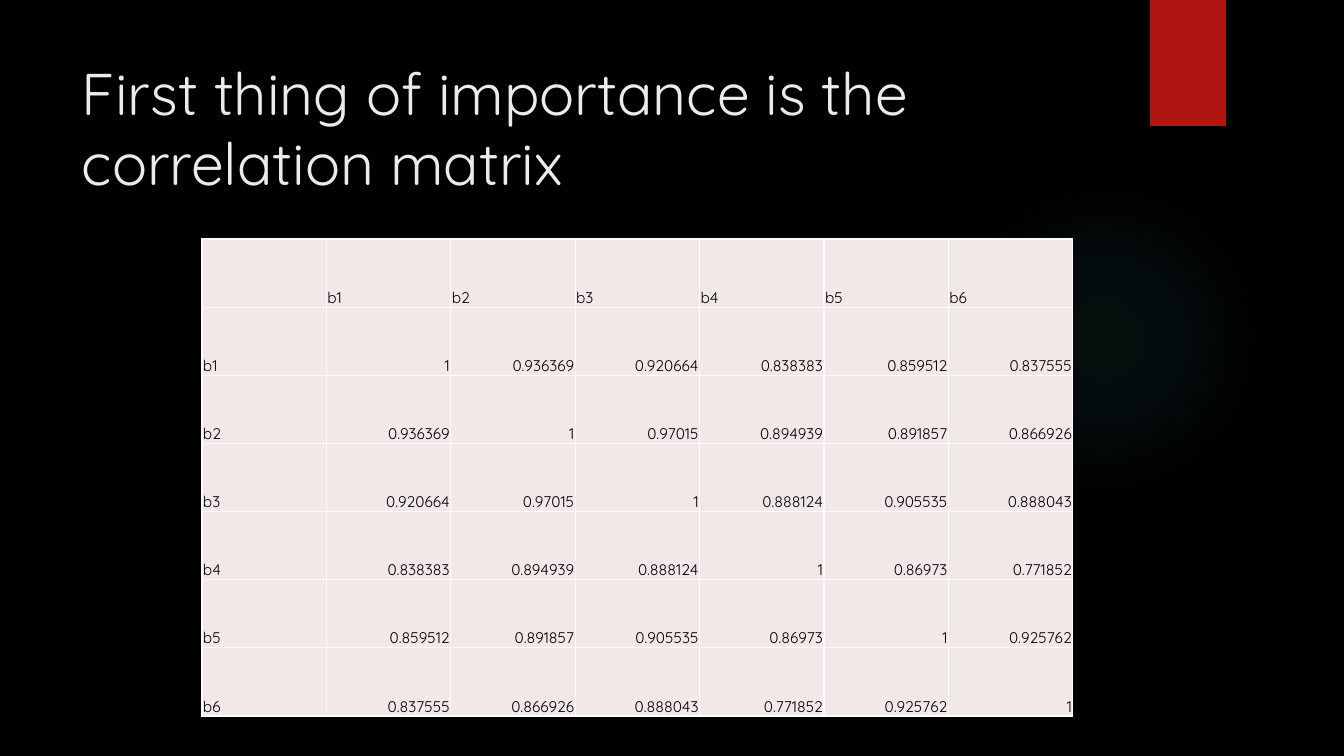
import pptx
import pptx.dml.color
import pptx.enum.shapes
import pptx.enum.text
import pptx.oxml
import pptx.oxml.ns
import pptx.util

SCALE = 12192000 / 1344  # EMU in one px
FONT = "Quicksand"
COLORS = {
    "back": "000000",
    "glow": "50B9C1",
    "tab": "B01513",
    "title": "EBEBEB",
    "cell": "F2E8E7",
    "text": "000000",
    "rule": "FFFFFF",
}
NAMES = ["b1", "b2", "b3", "b4", "b5", "b6"]
# Upper half of the symmetric matrix, from the diagonal rightward
UPPER = [
    ["1", "0.936369", "0.920664", "0.838383", "0.859512", "0.837555"],
    ["1", "0.97015", "0.894939", "0.891857", "0.866926"],
    ["1", "0.888124", "0.905535", "0.888043"],
    ["1", "0.86973", "0.771852"],
    ["1", "0.925762"],
    ["1"],
]
ALIGN = pptx.enum.text.PP_ALIGN
ANCHOR = pptx.enum.text.MSO_ANCHOR
SHAPE = pptx.enum.shapes.MSO_SHAPE


def px(count):
    return pptx.util.Emu(round(count * SCALE))


def color(name):
    return pptx.dml.color.RGBColor.from_string(COLORS[name])


def paint(fill, name):
    fill.solid()
    fill.fore_color.rgb = color(name)


def write(frame, text, size, tint, align=ALIGN.LEFT):
    para = frame.paragraphs[0]
    para.alignment = align
    run = para.add_run()
    run.text = text
    run.font.name = FONT
    run.font.size = pptx.util.Pt(size)
    run.font.color.rgb = color(tint)


def add_shape(slide, kind, box, tint):
    shape = slide.shapes.add_shape(kind, *map(px, box))
    shape.shadow.inherit = False
    shape.line.fill.background()
    paint(shape.fill, tint)
    return shape


def add_glow(slide, box):
    shape = add_shape(slide, SHAPE.OVAL, box, "glow")
    stops = "".join(
        f'<a:gs pos="{pos}000"><a:srgbClr val="{COLORS["glow"]}">'
        f'<a:alpha val="{alpha}000"/></a:srgbClr></a:gs>'
        for pos, alpha in [(0, 7), (36, 6), (69, 0)]
    )
    grad = pptx.oxml.parse_xml(
        f'<a:gradFill {pptx.oxml.ns.nsdecls("a")}><a:gsLst>{stops}</a:gsLst>'
        '<a:path path="circle"><a:fillToRect l="50000" t="50000" '
        'r="50000" b="50000"/></a:path></a:gradFill>'
    )
    props = shape.element.spPr
    props.replace(props.find(pptx.oxml.ns.qn("a:solidFill")), grad)


def add_title(slide, text, box):
    frame = slide.shapes.add_textbox(*map(px, box)).text_frame
    frame.word_wrap = True
    frame.vertical_anchor = ANCHOR.MIDDLE
    write(frame, text, 42, "title")


def rule_cell(cell):
    props = cell._tc.get_or_add_tcPr()
    for side in ("lnL", "lnR", "lnT", "lnB"):
        props.append(pptx.oxml.parse_xml(
            f'<a:{side} {pptx.oxml.ns.nsdecls("a")} w="12700"><a:solidFill>'
            f'<a:srgbClr val="{COLORS["rule"]}"/></a:solidFill></a:{side}>'
        ))


def fill_cell(cell, text, align):
    rule_cell(cell)
    paint(cell.fill, "cell")
    cell.vertical_anchor = ANCHOR.BOTTOM
    cell.margin_left = cell.margin_right = cell.margin_top = px(1)
    cell.margin_bottom = 0
    if text:
        write(cell.text_frame, text, 11, "text", align)


def add_matrix(slide, box):
    count = len(NAMES)
    size = count + 1
    table = slide.shapes.add_table(size, size, *map(px, box)).table
    table.first_row = table.horz_banding = False
    rows = [[""] + NAMES]
    for i, name in enumerate(NAMES):
        rows.append([name] + [UPPER[min(i, j)][abs(i - j)] for j in range(count)])
    for i, row in enumerate(rows):
        for j, text in enumerate(row):
            align = ALIGN.RIGHT if i and j else ALIGN.LEFT
            fill_cell(table.cell(i, j), text, align)


def main():
    deck = pptx.Presentation()
    deck.slide_width, deck.slide_height = px(1344), px(756)
    slide = deck.slides.add_slide(deck.slide_layouts[6])

    # Backdrop
    paint(slide.background.fill, "back")
    add_glow(slide, (949, 184, 310, 310))
    add_shape(slide, SHAPE.RECTANGLE, (1150, 0, 76, 126), "tab")

    # Title and correlation table
    add_title(slide, "First thing of importance is the correlation matrix",
              (72, 50, 1037, 154))
    add_matrix(slide, (202, 239, 871, 477))

    deck.save("out.pptx")


if __name__ == "__main__":
    main()
